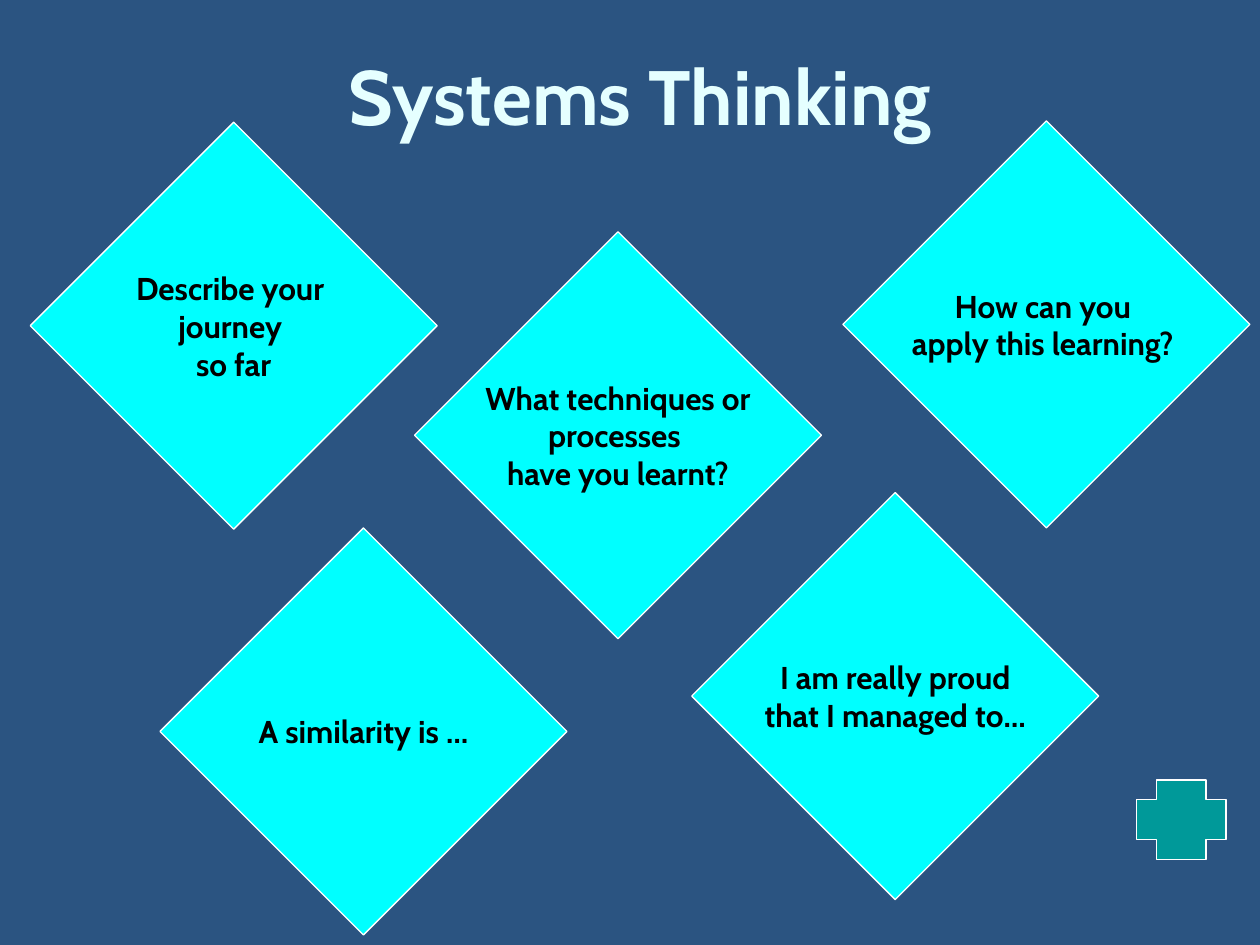
from pptx import Presentation
from pptx.dml.color import RGBColor as Color
from pptx.enum.shapes import MSO_SHAPE as Shape
from pptx.enum.text import MSO_ANCHOR as Anchor, PP_ALIGN as Align
from pptx.util import Inches, Pt

COLORS = {
    "background": "2B5481",
    "title": "E5FFFF",
    "diamond": "00FFFF",
    "cross": "009999",
    "outline": "FFFFFF",
    "text": "000000",
}
FONT = "Cabin"
DIAMOND_SIZE = 3.23
PROMPTS = [
    (0.24, 0.97, ["Describe your \vjourney \vso far"]),
    (1.27, 4.19, ["A similarity is …"]),
    (3.29, 1.84, ["What techniques or", "processes ", "have you learnt?"]),
    (5.49, 3.91, ["I am really proud", "that I managed to…"]),
    (6.69, 0.96, ["How can you ", "apply this learning? "]),
]


def color(name):
    return Color.from_string(COLORS[name])


def write_text(shape, lines, size=18, ink="text", wrap=False):
    frame = shape.text_frame
    frame.word_wrap = wrap
    frame.vertical_anchor = Anchor.MIDDLE
    for index, line in enumerate(lines):
        para = frame.add_paragraph() if index else frame.paragraphs[0]
        para.text = line
        para.alignment = Align.CENTER
        for span in para.runs:
            span.font.name = FONT
            span.font.size = Pt(size)
            span.font.bold = True
            span.font.color.rgb = color(ink)


def add_title(page, text):
    title = page.shapes.title
    title.left, title.top = Inches(0.58), Inches(0)
    title.width, title.height = Inches(9), Inches(1.5)
    write_text(title, [text], size=44, ink="title", wrap=True)


def add_outlined(page, kind, left, top, width, height, fill):
    shape = page.shapes.add_shape(
        kind, Inches(left), Inches(top), Inches(width), Inches(height)
    )
    shape.shadow.inherit = False
    shape.fill.solid()
    shape.fill.fore_color.rgb = color(fill)
    shape.line.color.rgb = color("outline")
    shape.line.width = Pt(0.75)
    return shape


def add_prompt(page, left, top, lines):
    diamond = add_outlined(
        page, Shape.DIAMOND, left, top, DIAMOND_SIZE, DIAMOND_SIZE, "diamond"
    )
    write_text(diamond, lines)


def main():
    deck = Presentation()
    deck.slide_width, deck.slide_height = Inches(10), Inches(7.5)
    page = deck.slides.add_slide(deck.slide_layouts[5])
    page.background.fill.solid()
    page.background.fill.fore_color.rgb = color("background")

    add_title(page, "Systems Thinking")
    for left, top, lines in PROMPTS:
        add_prompt(page, left, top, lines)
    cross = add_outlined(page, Shape.CROSS, 9.02, 6.19, 0.71, 0.63, "cross")
    cross.adjustments[0] = 0.25

    deck.save("out.pptx")


if __name__ == "__main__":
    main()
